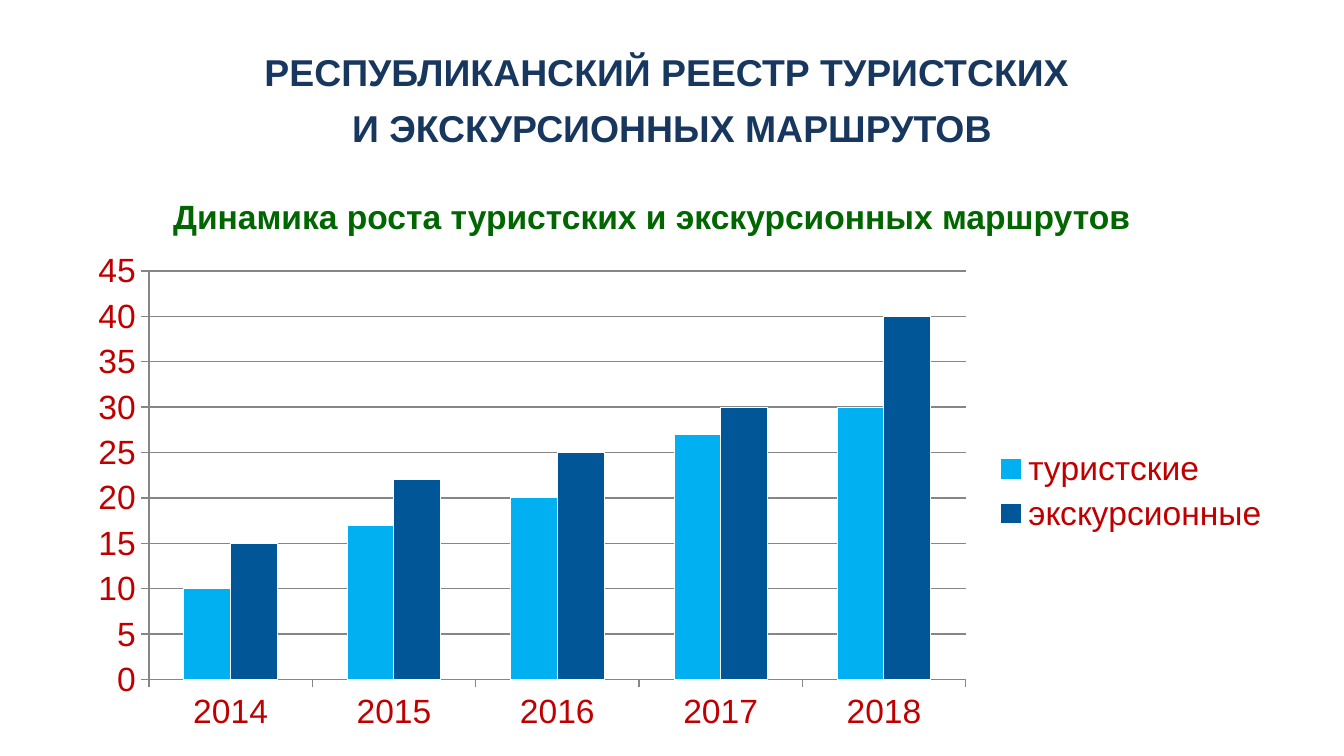
from pptx import Presentation
from pptx.chart.data import CategoryChartData
from pptx.dml.color import RGBColor
from pptx.enum.chart import XL_CHART_TYPE as ChartType, XL_LEGEND_POSITION as LegendPosition
from pptx.enum.chart import XL_TICK_MARK as TickMark
from pptx.enum.text import MSO_ANCHOR as Anchor, PP_ALIGN as Align
from pptx.util import Pt

PX = 9525
FONT = "Arial"
COLORS = {
    "title": "17375E",
    "subtitle": "006600",
    "labels": "C00000",
    "grid": "868686",
    "edge": "FFFFFF",
    "туристские": "00B0F0",
    "экскурсионные": "005696",
}
YEARS = ["2014", "2015", "2016", "2017", "2018"]
ROUTES = {
    "туристские": (10, 17, 20, 27, 30),
    "экскурсионные": (15, 22, 25, 30, 40),
}


def px(*lengths):
    """Turn pixel lengths into EMU."""
    return [length * PX for length in lengths]


def color(name):
    """Look up a named colour."""
    return RGBColor.from_string(COLORS[name])


def style_font(font, size, name, bold=False):
    """Format a font."""
    font.name = FONT
    font.size = Pt(size)
    font.bold = bold
    font.color.rgb = color(name)


def write_text(frame, text, size, name, bold=True, spacing=None, anchor=Anchor.TOP):
    """Fill a text frame with one centred, formatted paragraph."""
    frame.word_wrap = True
    frame.vertical_anchor = anchor
    paragraph = frame.paragraphs[0]
    paragraph.text = text
    paragraph.alignment = Align.CENTER
    if spacing:
        paragraph.line_spacing = Pt(spacing)
    for run in paragraph.runs:
        style_font(run.font, size, name, bold)


def add_title(slide):
    """Place and fill the slide title."""
    title = slide.shapes.title
    title.left, title.top, title.width, title.height = px(48, 22, 864, 90)
    write_text(
        title.text_frame,
        "РЕСПУБЛИКАНСКИЙ РЕЕСТР ТУРИСТСКИХ \vИ ЭКСКУРСИОННЫХ МАРШРУТОВ",
        20, "title", spacing=30, anchor=Anchor.MIDDLE,
    )


def add_subtitle(slide):
    """Add the heading above the chart."""
    subtitle = slide.shapes.add_textbox(*px(53, 135, 832, 38))
    write_text(
        subtitle.text_frame,
        "Динамика роста туристских и экскурсионных маршрутов ",
        18, "subtitle",
    )


def style_axis(axis, has_grid):
    """Format an axis and its gridlines."""
    axis.major_tick_mark = TickMark.OUTSIDE
    axis.minor_tick_mark = TickMark.NONE
    axis.format.line.color.rgb = color("grid")
    axis.has_major_gridlines = has_grid
    if has_grid:
        axis.major_gridlines.format.line.color.rgb = color("grid")


def add_routes_chart(slide):
    """Add the clustered columns of routes by year."""
    data = CategoryChartData()
    data.categories = YEARS
    for kind, counts in ROUTES.items():
        data.add_series(kind, counts)
    chart = slide.shapes.add_chart(
        ChartType.COLUMN_CLUSTERED, *px(53, 173, 864, 356), data
    ).chart
    chart.has_title = False
    style_font(chart.font, 18, "labels")
    chart.has_legend = True
    chart.legend.position = LegendPosition.RIGHT
    chart.legend.include_in_layout = False
    style_axis(chart.category_axis, False)
    style_axis(chart.value_axis, True)
    chart.value_axis.minimum_scale = 0
    chart.value_axis.maximum_scale = 45
    chart.value_axis.major_unit = 5
    plot = chart.plots[0]
    plot.vary_by_categories = False
    plot.gap_width = 150
    plot.overlap = 0
    for series in plot.series:
        series.format.fill.solid()
        series.format.fill.fore_color.rgb = color(series.name)
        series.format.line.color.rgb = color("edge")


def main():
    """Build and save the slide."""
    deck = Presentation()
    deck.slide_width, deck.slide_height = px(960, 540)
    slide = deck.slides.add_slide(deck.slide_layouts[5])
    add_title(slide)
    add_routes_chart(slide)
    add_subtitle(slide)
    deck.save("out.pptx")


if __name__ == "__main__":
    main()
